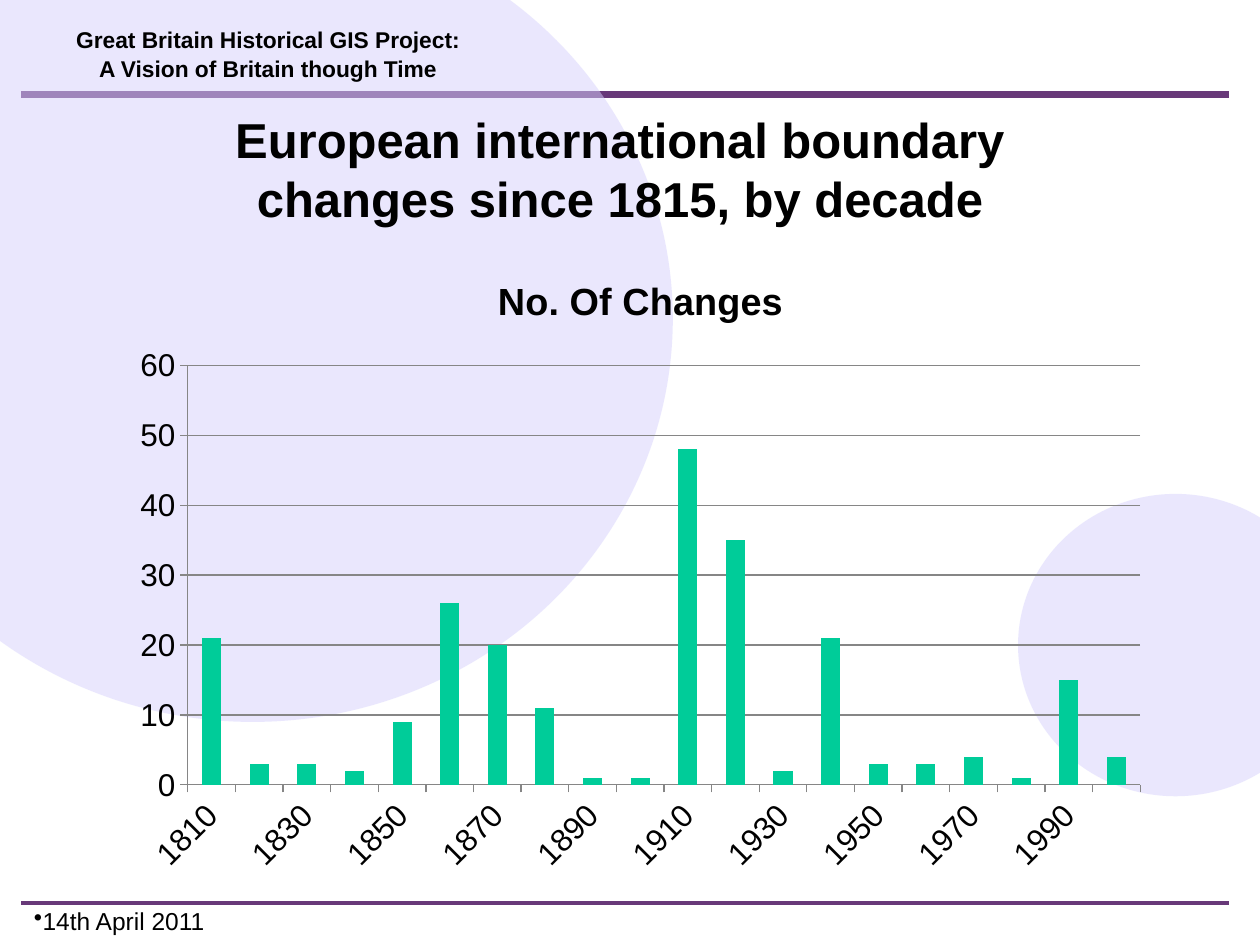
from dataclasses import dataclass

from lxml import etree
from pptx import Presentation
from pptx.chart.data import CategoryChartData
from pptx.dml.color import RGBColor
from pptx.enum.chart import XL_CHART_TYPE, XL_TICK_MARK
from pptx.enum.shapes import MSO_CONNECTOR, MSO_SHAPE
from pptx.enum.text import MSO_ANCHOR, PP_ALIGN
from pptx.oxml import parse_xml
from pptx.oxml.ns import nsdecls, qn
from pptx.util import Inches, Pt

COLUMN = XL_CHART_TYPE.COLUMN_CLUSTERED
OUT, NONE = XL_TICK_MARK.OUTSIDE, XL_TICK_MARK.NONE
STRAIGHT = MSO_CONNECTOR.STRAIGHT
OVAL = MSO_SHAPE.OVAL
MIDDLE = MSO_ANCHOR.MIDDLE
CENTER, LEFT = PP_ALIGN.CENTER, PP_ALIGN.LEFT


@dataclass(frozen=True)
class Theme:
    font: str = "Arial"
    ink: RGBColor = RGBColor(0, 0, 0)
    rule: RGBColor = RGBColor(0x68, 0x39, 0x79)
    disc: RGBColor = RGBColor(0xD7, 0xD1, 0xFD)
    bar: RGBColor = RGBColor(0x00, 0xCC, 0x99)
    grid: RGBColor = RGBColor(0x86, 0x86, 0x86)
    title: int = 28
    head: int = 13
    date: int = 14
    axis: int = 18
    label: float = 21.6


THEME = Theme()
CHANGES = [21, 3, 3, 2, 9, 26, 20, 11, 1, 1,
           48, 35, 2, 21, 3, 3, 4, 1, 15, 4]
DECADES = [1810 + 10 * i for i in range(len(CHANGES))]


def style(font, size, bold=False):
    font.name = THEME.font
    font.size = Pt(size)
    font.bold = bold
    font.color.rgb = THEME.ink


def place(shape, box):
    shape.left, shape.top, shape.width, shape.height = map(Inches, box)


def add_rule(slide, y, width):
    line = slide.shapes.add_connector(
        STRAIGHT, Inches(9.75), Inches(y), Inches(0.17), Inches(y))
    line.line.color.rgb = THEME.rule
    line.line.width = Pt(width)
    etree.SubElement(line._element.spPr, qn("a:effectLst"))


def add_disc(slide, box):
    disc = slide.shapes.add_shape(OVAL, *map(Inches, box))
    disc.shadow.inherit = False
    disc.fill.solid()
    disc.fill.fore_color.rgb = THEME.disc
    disc.line.fill.background()
    color = disc._element.spPr.find(".//" + qn("a:srgbClr"))
    etree.SubElement(color, qn("a:alpha"), val="50000")


def write(shape, lines, size, bold=False, align=CENTER, space=1.0):
    frame = shape.text_frame
    frame.word_wrap = True
    frame.vertical_anchor = MIDDLE
    frame.margin_top = frame.margin_bottom = 0
    para = frame.paragraphs[0]
    para.alignment = align
    para.line_spacing = space
    for i, text in enumerate(lines):
        if i:
            para.add_line_break()
        run = para.add_run()
        run.text = text
        style(run.font, size, bold)
    return para


def add_text(slide, box, *args, **kwargs):
    return write(slide.shapes.add_textbox(*map(Inches, box)), *args, **kwargs)


def add_bullet(para):
    props = para._p.get_or_add_pPr()
    etree.SubElement(props, qn("a:buChar"), char="•")


def set_plot(chart, box, inner):
    # Fix the inner plot area, given in slide inches
    left, top, width, height = box
    x, y, w, h = inner
    shares = ((x - left) / width, (y - top) / height, w / width, h / height)
    area = chart._chartSpace.find(".//" + qn("c:plotArea"))
    for old in area.findall(qn("c:layout")):
        area.remove(old)
    parts = "".join(f'<c:{k} val="{v:.4f}"/>' for k, v in
                    zip("xywh", shares))
    area.insert(0, parse_xml(
        f'<c:layout {nsdecls("c")}><c:manualLayout>'
        '<c:layoutTarget val="inner"/><c:xMode val="edge"/>'
        f'<c:yMode val="edge"/>{parts}</c:manualLayout></c:layout>'))


def set_labels(axis):
    # Show every second decade, slanted upwards
    axis._element.txPr.find(qn("a:bodyPr")).set("rot", "-2700000")
    skip = parse_xml(f'<c:tickLblSkip {nsdecls("c")} val="2"/>')
    axis._element.find(qn("c:noMultiLvlLbl")).addprevious(skip)


def add_bars(slide, box, inner):
    data = CategoryChartData()
    data.categories = DECADES
    data.add_series("No. Of Changes", CHANGES)
    chart = slide.shapes.add_chart(COLUMN, *map(Inches, box), data).chart
    style(chart.font, THEME.axis)
    chart.has_legend = False
    chart.has_title = True
    run = chart.chart_title.text_frame.paragraphs[0].add_run()
    run.text = "No. Of Changes"
    style(run.font, THEME.label, True)

    plot = chart.plots[0]
    plot.gap_width = 150
    plot.vary_by_categories = False
    fill = plot.series[0].format.fill
    fill.solid()
    fill.fore_color.rgb = THEME.bar

    cats, vals = chart.category_axis, chart.value_axis
    for axis in (cats, vals):
        axis.major_tick_mark, axis.minor_tick_mark = OUT, NONE
        axis.format.line.color.rgb = THEME.grid
        style(axis.tick_labels.font, THEME.axis)
    vals.minimum_scale, vals.maximum_scale, vals.major_unit = 0, 60, 10
    vals.has_major_gridlines = True
    vals.major_gridlines.format.line.color.rgb = THEME.grid
    set_labels(cats)
    set_plot(chart, box, inner)


def main():
    deck = Presentation()
    deck.slide_width, deck.slide_height = Inches(10), Inches(7.5)
    slide = deck.slides.add_slide(deck.slide_layouts[5])

    # Backdrop
    add_rule(slide, 0.75, 4.5)
    add_rule(slide, 7.17, 2.25)
    add_disc(slide, (-1.33, -0.67, 6.67, 6.4))
    add_disc(slide, (8.08, 3.92, 2.5, 2.4))

    # Project name
    add_text(slide, (0.25, 0.16, 3.75, 0.53),
             ["Great Britain Historical GIS Project:",
              "A Vision of Britain though Time"],
             THEME.head, True, space=1.05)

    # Title, raised above the backdrop
    title = slide.shapes.title
    slide.shapes._spTree.append(title._element)
    place(title, (0.67, 0.92, 8.5, 0.83))
    write(title, ["European international boundary",
                  "changes since 1815, by decade"], THEME.title, True)

    # Date
    date = add_text(slide, (0.17, 7.18, 2.08, 0.25),
                    ["14th April 2011"], THEME.date, align=LEFT)
    add_bullet(date)

    # Chart
    add_bars(slide, (0.95, 1.99, 8.27, 5.03), (1.49, 2.9, 7.56, 3.33))
    deck.save("out.pptx")


if __name__ == "__main__":
    main()
